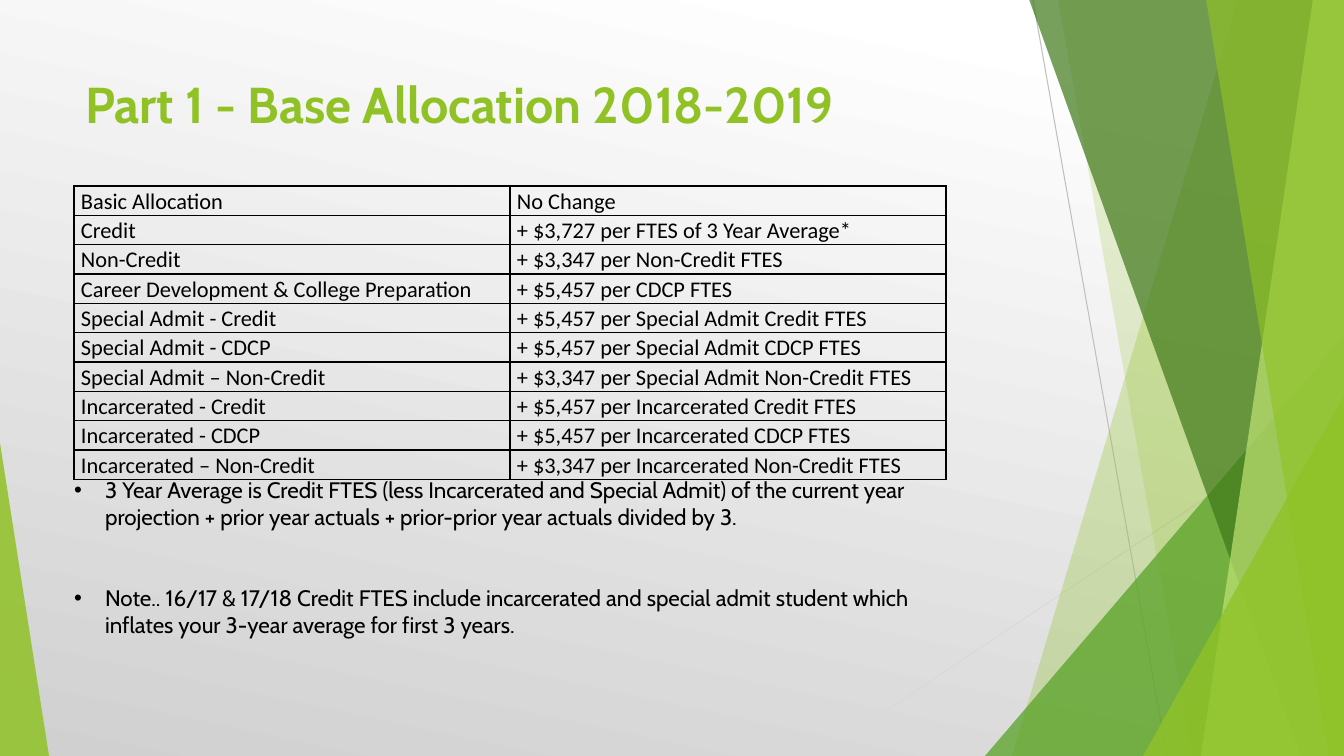
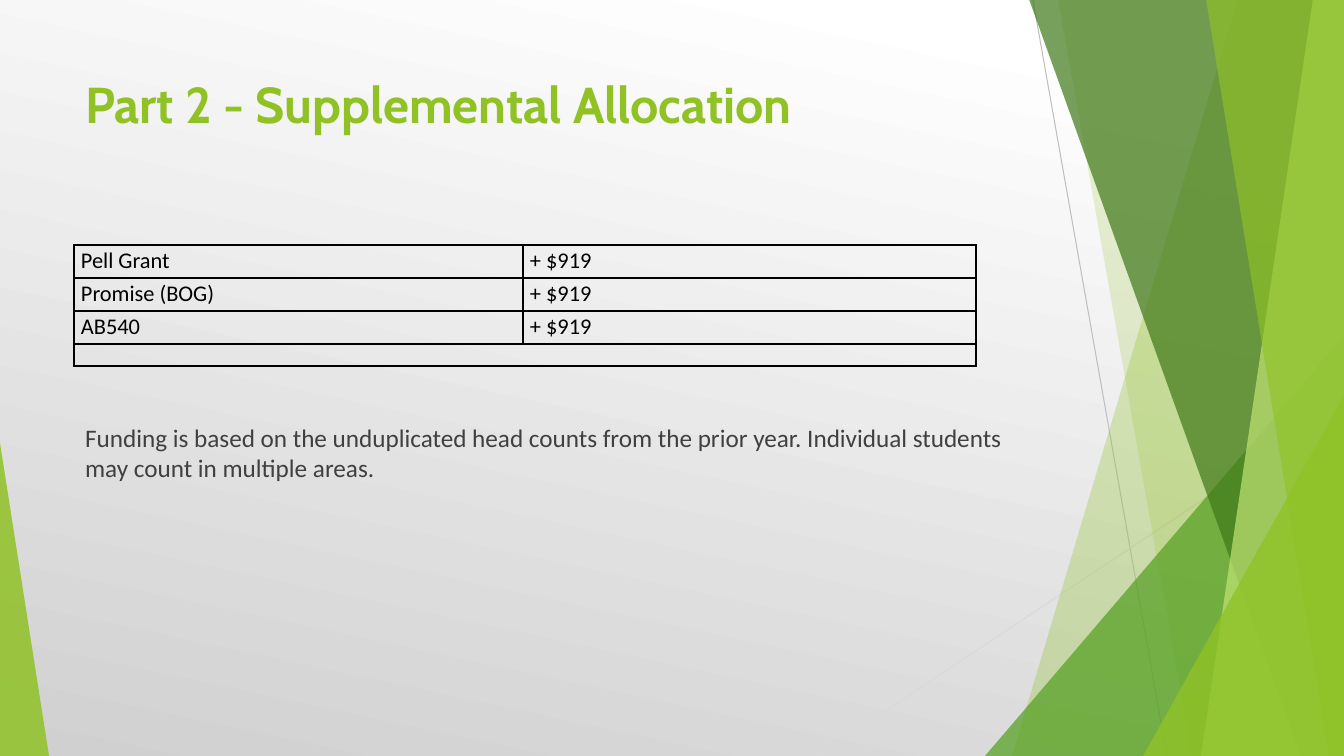
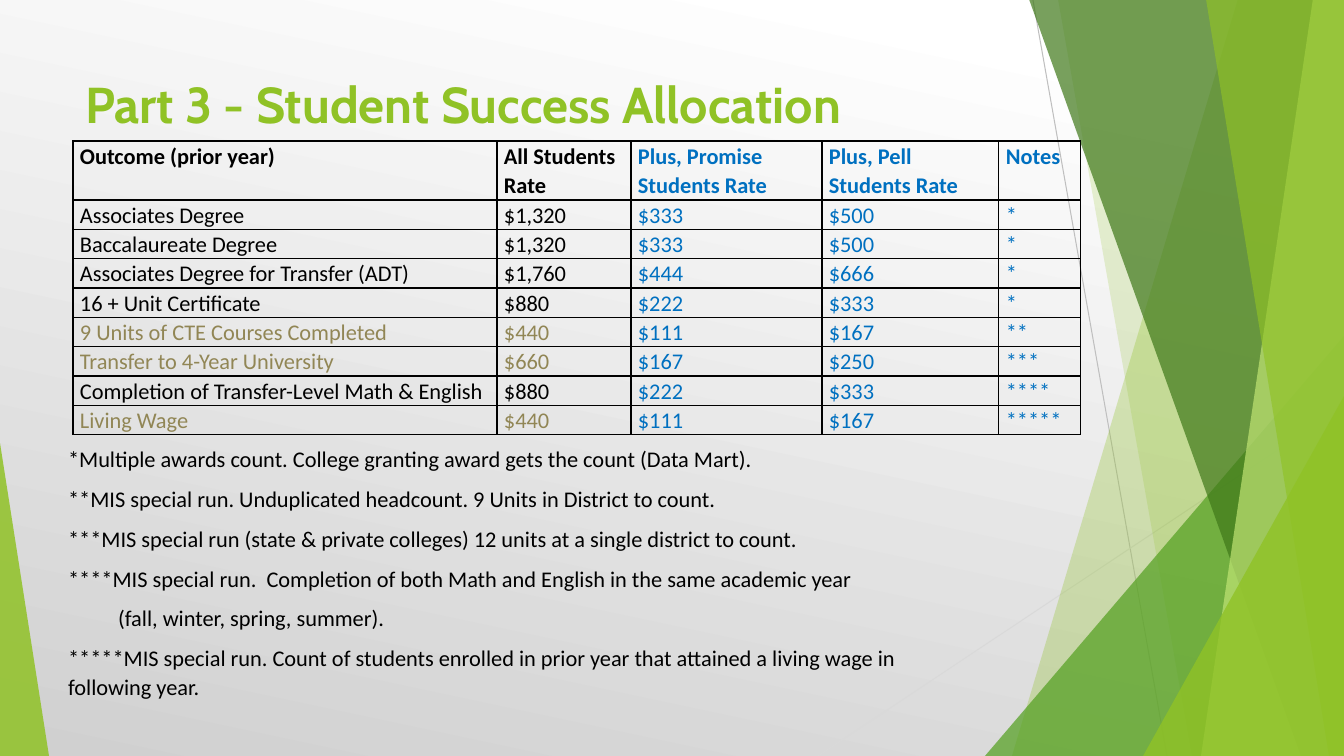
from lxml.etree import SubElement
from pptx import Presentation
from pptx.dml.color import RGBColor
from pptx.enum.shapes import MSO_CONNECTOR, MSO_SHAPE
from pptx.enum.text import MSO_ANCHOR, MSO_AUTO_SIZE, PP_ALIGN
from pptx.oxml.ns import qn
from pptx.util import Pt

# Shared look
W, H = 1344, 756
PX = 12192000 / W
GREEN, LEAF, FOREST, LIME = "90C226", "54A021", "3F7819", "C0E474"
BLACK, GREY, BLUE, TAN = "000000", "404040", "0070C0", "918655"
HEAD, BODY = "Cabin", "Calibri"

# Backdrop: lines as (x1, y1, x2, y2, colour)
LINES = [(1033, 0, 1167, H, "BFBFBF"), (W, 406, 818, H, "D9D9D9")]
# Bands run to the right edge: (top left x, bottom left x, colour, opacity %)
# Triangles: (box, apex, colour, opacity %)
FACETS = [
    ("band", 1238, 1012, GREEN, 30),
    ("band", 1058, 1192, GREEN, 20),
    ("triangle", (985, 336, 359, 420), 1, LEAF, 72),
    ("band", 1029, 1301, FOREST, 70),
    ("band", 1313, 1201, LIME, 70),
    ("band", 1206, 1329, GREEN, 65),
    ("triangle", (1143, 396, 201, 360), 1, GREEN, 80),
    ("triangle", (0, 443, 49, 313), 0, GREEN, 85),
]

BASE_ROWS = [
    ("Basic Allocation", "No Change"),
    ("Credit", "+ $3,727 per FTES of 3 Year Average*"),
    ("Non-Credit", "+ $3,347 per Non-Credit FTES"),
    ("Career Development & College Preparation", "+ $5,457 per CDCP FTES"),
    ("Special Admit - Credit", "+ $5,457 per Special Admit Credit FTES"),
    ("Special Admit - CDCP", "+ $5,457 per Special Admit CDCP FTES"),
    ("Special Admit – Non-Credit", "+ $3,347 per Special Admit Non-Credit FTES"),
    ("Incarcerated - Credit", "+ $5,457 per Incarcerated Credit FTES"),
    ("Incarcerated - CDCP", "+ $5,457 per Incarcerated CDCP FTES"),
    ("Incarcerated – Non-Credit", "+ $3,347 per Incarcerated Non-Credit FTES"),
]
BASE_NOTES = [
    "3 Year Average is Credit FTES (less Incarcerated and Special Admit) of the current year "
    "projection + prior year actuals + prior-prior year actuals divided by 3.",
    "Note.. 16/17 & 17/18 Credit FTES include incarcerated and special admit student which "
    "inflates your 3-year average for first 3 years.",
]
SUPPLEMENT_ROWS = [("Pell Grant", "+ $919"), ("Promise (BOG)", "+ $919"),
                   ("AB540", "+ $919"), ("", "")]
SUPPLEMENT_NOTE = ("Funding is based on the unduplicated head counts from the prior year. "
                   "Individual students may count in multiple areas.")
SUCCESS_ROWS = [
    ("Outcome (prior year)", "All Students Rate", "Plus, Promise Students Rate",
     "Plus, Pell Students Rate", "Notes"),
    ("Associates Degree", "$1,320", "$333", "$500", "*"),
    ("Baccalaureate Degree", "$1,320", "$333", "$500", "*"),
    ("Associates Degree for Transfer (ADT)", "$1,760", "$444", "$666", "*"),
    ("16 + Unit Certificate", "$880", "$222", "$333", "*"),
    ("9 Units of CTE Courses Completed", "$440", "$111", "$167", "**"),
    ("Transfer to 4-Year University", "$660", "$167", "$250", "***"),
    ("Completion of Transfer-Level Math & English", "$880", "$222", "$333", "****"),
    ("Living Wage", "$440", "$111", "$167", "*****"),
]
TAN_ROWS = (5, 6, 8)
SUCCESS_NOTES = [
    "*Multiple awards count. College granting award gets the count (Data Mart).",
    "**MIS special run. Unduplicated headcount. 9 Units in District to count.",
    "***MIS special run (state & private colleges) 12 units at a single district to count.",
    "****MIS special run.  Completion of both Math and English in the same academic year",
    "(fall, winter, spring, summer).",
    "*****MIS special run. Count of students enrolled in prior year that attained a living "
    "wage in following year.",
]


def px(n):
    return round(n * PX)


def rgb(color):
    return RGBColor.from_string(color)


def place(sp, box):
    sp.left, sp.top, sp.width, sp.height = map(px, box)


def add_text(p, text, size, font, color, bold=False):
    r = p.add_run()
    r.text = text
    r.font.size, r.font.name, r.font.bold = Pt(size), font, bold
    r.font.color.rgb = rgb(color)


def set_frame(sp, box):
    place(sp, box)
    tf = sp.text_frame
    tf.word_wrap, tf.auto_size = True, MSO_AUTO_SIZE.NONE
    tf.vertical_anchor = MSO_ANCHOR.TOP
    return tf


def add_facet(s, kind, a, b, color, opacity):
    if kind == "band":
        points = [(a, -1), (W, -1), (W, H), (b, H)]
        points = [(px(x), px(y)) for x, y in points]
        builder = s.shapes.build_freeform(*points[0], scale=1.0)
        builder.add_line_segments(points[1:], close=True)
        sp = builder.convert_to_shape()
    else:
        sp = s.shapes.add_shape(MSO_SHAPE.ISOSCELES_TRIANGLE, *map(px, a))
        sp.adjustments[0] = b
    sp.shadow.inherit = False
    sp.fill.solid()
    sp.fill.fore_color.rgb = rgb(color)
    sp.line.fill.background()
    clr = next(sp.element.spPr.iter(qn("a:srgbClr")))
    SubElement(clr, qn("a:alpha")).set("val", str(opacity * 1000))
    return sp


def add_line(s, x1, y1, x2, y2, color):
    line = s.shapes.add_connector(MSO_CONNECTOR.STRAIGHT, px(x1), px(y1), px(x2), px(y2))
    line.line.color.rgb = rgb(color)
    line.line.width = Pt(0.75)
    SubElement(line.element.spPr, qn("a:effectLst"))
    return line


def build_master(prs, s):
    """Draw the backdrop on a slide, then move it behind the master's placeholders."""
    master = prs.slide_master
    fill = master.background.fill
    fill.gradient()
    fill.gradient_angle = 360 - 102
    for stop, (position, color) in zip(fill.gradient_stops, [(0.1, "FFFFFF"), (1, "D0D0D0")]):
        stop.position = position
        stop.color.rgb = rgb(color)
    parts = [add_line(s, *line) for line in LINES] + [add_facet(s, *f) for f in FACETS]
    for i, sp in enumerate(parts):
        next(sp.element.iter(qn("p:cNvPr"))).set("id", str(20 + i))
        master.shapes.element.insert(2 + i, sp.element)


def add_slide(prs, title, title_height=145):
    s = prs.slides.add_slide(prs.slide_layouts[1])
    p = set_frame(s.shapes.title, (75, 68, 948, title_height)).paragraphs[0]
    p.alignment = PP_ALIGN.LEFT
    add_text(p, title, 36, HEAD, GREEN, True)
    return s


def add_body(s, box, texts, size, font, color, bullet=None, indents=None,
             before=0, after=0, spacing=1.0):
    """Fill the body placeholder; indents maps a paragraph to its left margin."""
    tf = set_frame(s.placeholders[1], box)
    for i, text in enumerate(texts):
        p = tf.add_paragraph() if i else tf.paragraphs[0]
        p.space_before = Pt(before if i else 0)
        p.space_after, p.line_spacing = Pt(after), spacing
        pPr = p._p.get_or_add_pPr()
        margin = 31 if bullet else (indents or {}).get(i, 0)
        pPr.set("marL", str(px(margin)))
        pPr.set("indent", str(px(-margin if bullet else 0)))
        if bullet:
            SubElement(pPr, qn("a:buChar")).set("char", bullet)
        else:
            SubElement(pPr, qn("a:buNone"))
        add_text(p, text, size, font, color)


def set_borders(cell):
    tcPr = cell._tc.get_or_add_tcPr()
    for side in ("lnL", "lnR", "lnT", "lnB"):
        ln = SubElement(tcPr, qn("a:" + side))
        ln.set("w", str(Pt(1)))
        fill = SubElement(ln, qn("a:solidFill"))
        SubElement(fill, qn("a:srgbClr")).set("val", BLACK)


def add_grid(s, left, top, widths, heights, rows, color=lambda i, j: BLACK, header=False):
    box = (left, top, sum(widths), sum(heights))
    table = s.shapes.add_table(len(rows), len(widths), *map(px, box)).table
    table.first_row = table.horz_banding = False
    for col, width in zip(table.columns, widths):
        col.width = px(width)
    for i, (texts, height) in enumerate(zip(rows, heights)):
        table.rows[i].height = px(height)
        for j, text in enumerate(texts):
            cell = table.cell(i, j)
            set_borders(cell)
            cell.fill.background()
            cell.margin_left = cell.margin_right = px(7)
            cell.margin_top = cell.margin_bottom = 0
            p = cell.text_frame.paragraphs[0]
            p.line_spacing = 1.07
            if text:
                add_text(p, text, 16, BODY, color(i, j), header and i == 0)
            else:
                SubElement(p._p, qn("a:endParaRPr")).set("sz", "1100")
    return table


def success_color(i, j):
    if j > 1:
        return BLUE
    return TAN if i in TAN_ROWS else BLACK


def main():
    prs = Presentation()
    prs.slide_width, prs.slide_height = px(W), px(H)

    # Base allocation
    s = add_slide(prs, "Part 1 - Base Allocation 2018-2019")
    build_master(prs, s)
    add_body(s, (64, 471, 883, 173), BASE_NOTES, 16, HEAD, BLACK, bullet="•", before=39)
    add_grid(s, 74, 186, [436, 436], [29] * len(BASE_ROWS), BASE_ROWS)

    # Supplemental allocation
    s = add_slide(prs, "Part 2 - Supplemental Allocation")
    add_body(s, (75, 417, 948, 248), [SUPPLEMENT_NOTE], 18, BODY, GREY)
    table = add_grid(s, 74, 245, [449, 453], [33, 33, 33, 22], SUPPLEMENT_ROWS)
    table.cell(3, 0).merge(table.cell(3, 1))

    # Student success allocation
    s = add_slide(prs, "Part 3 - Student Success Allocation", 75)
    add_body(s, (58, 438, 913, 269), SUCCESS_NOTES, 16, BODY, BLACK,
             indents={4: 50}, after=8, spacing=1.07)
    add_grid(s, 73, 141, [424, 134, 191, 177, 82], [59] + [29] * 8, SUCCESS_ROWS,
             success_color, header=True)

    prs.save("out.pptx")


if __name__ == "__main__":
    main()
